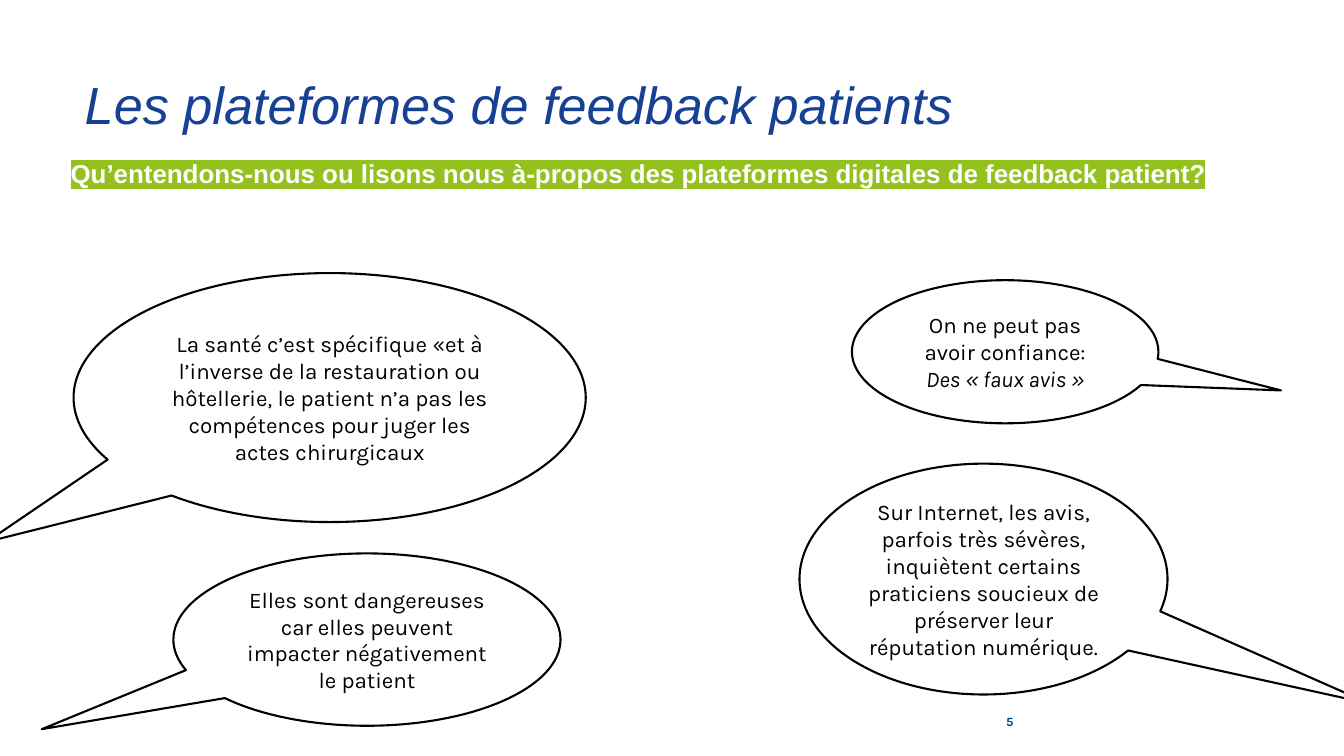
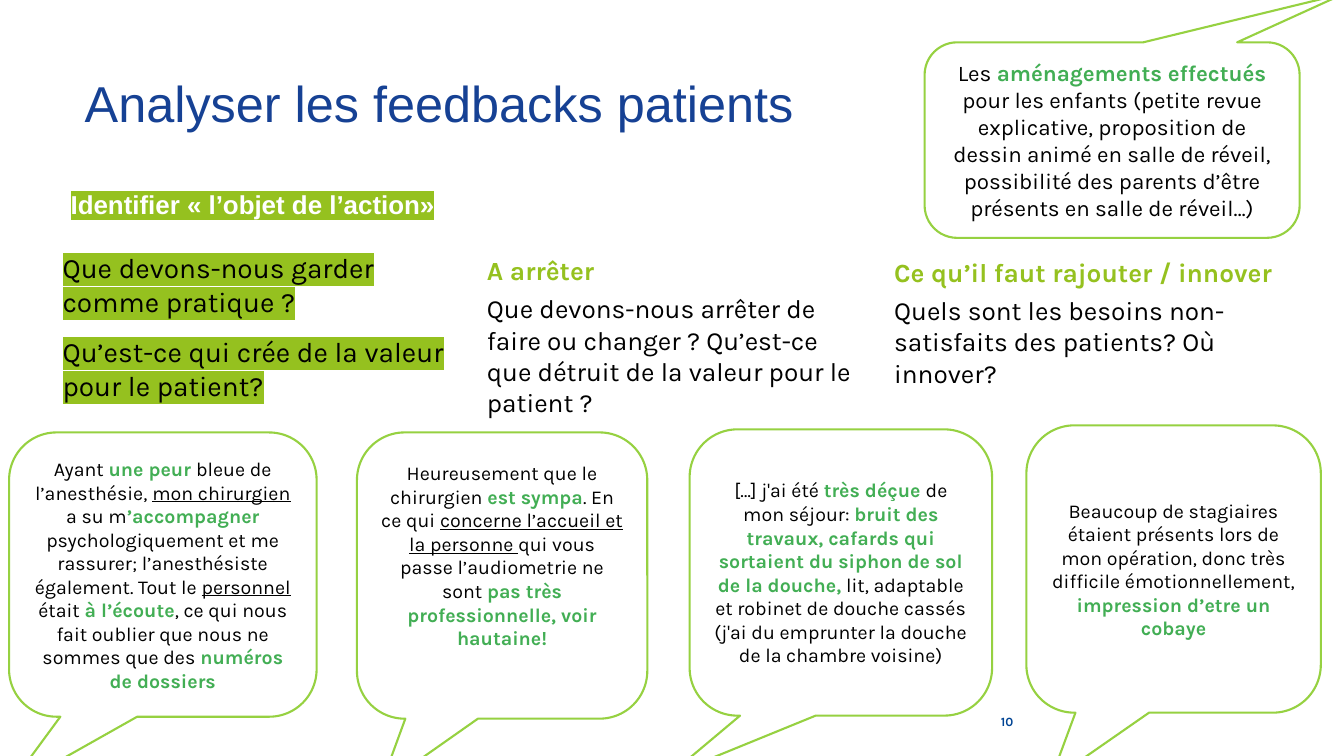
"""Build two slides on patient feedback platforms."""
from dataclasses import dataclass
from typing import NamedTuple

from lxml.etree import SubElement
from pptx import Presentation
from pptx.dml.color import RGBColor
from pptx.enum.shapes import MSO_SHAPE as Preset
from pptx.enum.text import MSO_ANCHOR as Anchor, MSO_AUTO_SIZE as AutoSize, PP_ALIGN as Align
from pptx.oxml.ns import qn
from pptx.util import Inches, Pt


@dataclass(frozen=True)
class Theme:
    navy: str = "164194"
    number_blue: str = "004494"
    lime: str = "95C11F"
    bubble_lime: str = "96D141"
    green: str = "42AE54"
    black: str = "000000"
    white: str = "FFFFFF"
    heading_font: str = "Arial"
    text_font: str = "Karla"
    subtitle_size: float = 18.5
    column_size: float = 18.7
    question_size: float = 20
    large_size: float = 16
    small_size: float = 14
    number_size: float = 9
    outline: float = 1.5


THEME = Theme()


class Box(NamedTuple):
    left: float
    top: float
    width: float
    height: float


class Span(NamedTuple):
    text: str
    color: str = THEME.black
    bold: bool = False
    italic: bool = False
    underline: bool = False
    highlight: str = ""


@dataclass(frozen=True)
class TextStyle:
    size: float
    font: str = THEME.text_font
    align: Align = Align.LEFT
    anchor: Anchor = Anchor.TOP
    before: float = 0
    after: float = 0
    margin: float = 0
    indent: float = 0
    insets: tuple[float, float, float, float] = (0.1, 0.05, 0.1, 0.05)


@dataclass(frozen=True)
class Callout:
    box: Box
    tail: tuple[float, float]
    paragraphs: list[list[Span]]
    size: float = THEME.large_size
    bottom_inset: float = 0.05


@dataclass(frozen=True)
class CalloutLook:
    preset: Preset
    outline: str


ELLIPSE = CalloutLook(Preset.OVAL_CALLOUT, THEME.black)
ROUNDED = CalloutLook(Preset.ROUNDED_RECTANGULAR_CALLOUT, THEME.bubble_lime)

TITLE_BOX = Box(0.74, 0.67, 9.4, 1.44)
NUMBER_BOX = Box(9.4, 6.96, 0.75, 0.4)
NO_INSETS = (0, 0, 0, 0)
SUBTITLE_STYLE = TextStyle(THEME.subtitle_size, THEME.heading_font, margin=0.01, indent=0.12)
NUMBER_STYLE = TextStyle(THEME.number_size, align=Align.RIGHT, anchor=Anchor.MIDDLE)
QUESTION_STYLE = TextStyle(THEME.question_size, before=4, after=8, margin=0.13, insets=NO_INSETS)


def strong(text: str) -> Span:
    return Span(text, THEME.green, bold=True)


def underlined(text: str) -> Span:
    return Span(text, underline=True)


def marked(text: str) -> Span:
    return Span(text, highlight=THEME.lime)


def place(shape, box: Box) -> None:
    shape.left, shape.top, shape.width, shape.height = map(Inches, box)


def write_span(paragraph, span: Span, style: TextStyle) -> None:
    run = paragraph.add_run()
    run.text = span.text
    font = run.font
    font.size, font.name = Pt(style.size), style.font
    font.bold, font.italic, font.underline = span.bold, span.italic, span.underline
    font.color.rgb = RGBColor.from_string(span.color)
    if span.highlight:
        properties = run._r.get_or_add_rPr()
        highlight = SubElement(properties, qn("a:highlight"))
        SubElement(highlight, qn("a:srgbClr"), val=span.highlight)
        properties.find(qn("a:latin")).addprevious(highlight)


def write_text(shape, paragraphs: list[list[Span]], style: TextStyle) -> None:
    frame = shape.text_frame
    frame.word_wrap = True
    frame.auto_size = AutoSize.NONE
    frame.vertical_anchor = style.anchor
    (frame.margin_left, frame.margin_top,
     frame.margin_right, frame.margin_bottom) = map(Inches, style.insets)
    for index, spans in enumerate(paragraphs):
        paragraph = frame.add_paragraph() if index else frame.paragraphs[0]
        properties = paragraph._p.get_or_add_pPr()
        properties.set("marL", str(Inches(style.margin)))
        properties.set("indent", str(Inches(style.indent)))
        SubElement(properties, qn("a:buNone"))
        paragraph.alignment = style.align
        paragraph.space_before = Pt(style.before if index else 0)
        paragraph.space_after = Pt(style.after)
        for span in spans:
            write_span(paragraph, span, style)


def add_text(slide, box: Box, paragraphs: list[list[Span]], style: TextStyle) -> None:
    write_text(slide.shapes.add_textbox(*map(Inches, box)), paragraphs, style)


def add_callout(slide, callout: Callout, look: CalloutLook) -> None:
    shape = slide.shapes.add_shape(look.preset, *map(Inches, callout.box))
    shape.shadow.inherit = False
    shape.adjustments[0], shape.adjustments[1] = callout.tail
    shape.fill.solid()
    shape.fill.fore_color.rgb = RGBColor.from_string(THEME.white)
    shape.line.color.rgb = RGBColor.from_string(look.outline)
    shape.line.width = Pt(THEME.outline)
    style = TextStyle(callout.size, align=Align.CENTER, anchor=Anchor.MIDDLE,
                      insets=(0.1, 0.05, 0.1, callout.bottom_inset))
    write_text(shape, callout.paragraphs, style)


def add_column(slide, box: Box, heading: str, question: str, style: TextStyle) -> None:
    add_text(slide, box, [[Span(heading, THEME.lime, bold=True)], [Span(question)]], style)


def add_slide(presentation, title: Span, title_size: float, subtitle: str,
              subtitle_box: Box, number: int, callouts: list[Callout], look: CalloutLook):
    slide = presentation.slides.add_slide(presentation.slide_layouts[1])
    heading, body = slide.shapes.title, slide.placeholders[1]
    place(heading, TITLE_BOX)
    write_text(heading, [[title]], TextStyle(title_size, THEME.heading_font))
    place(body, subtitle_box)
    subtitle_span = Span(subtitle, THEME.white, bold=True, highlight=THEME.lime)
    write_text(body, [[subtitle_span]], SUBTITLE_STYLE)
    for callout in callouts:
        add_callout(slide, callout, look)
    number_span = Span(str(number), THEME.number_blue, bold=True)
    add_text(slide, NUMBER_BOX, [[number_span]], NUMBER_STYLE)
    return slide


OPINIONS = [
    Callout(Box(0.73, 2.71, 5.08, 2.47), (-0.67, 0.58), [[Span(
        "La santé c’est spécifique «et à l’inverse de la restauration ou hôtellerie, "
        "le patient n’a pas les compétences pour juger les actes chirurgicaux")]]),
    Callout(Box(8.45, 2.78, 3.04, 1.42), (0.9, 0.27), [
        [Span("On ne peut pas avoir confiance:")],
        [Span("Des « faux avis »", italic=True)]]),
    Callout(Box(7.93, 4.6, 3.65, 2.29), (1.05, 0.54), [[Span(
        "Sur Internet, les avis, parfois très sévères, inquiètent certains praticiens "
        "soucieux de préserver leur réputation numérique.")]]),
    Callout(Box(1.72, 5.49, 3.84, 1.71), (-0.84, 0.52), [[Span(
        "Elles sont dangereuses car elles peuvent impacter négativement le patient")]]),
]

FEEDBACKS = [
    Callout(Box(0.09, 4.29, 3.05, 2.82), (-0.51, 0.76), [[
        Span("Ayant "), strong("une peur "), Span("bleue de l’anesthésie, "),
        underlined("mon chirurgien "), Span("a su m"), strong("’accompagner"),
        Span(" psychologiquement et me rassurer; l’anesthésiste également. Tout le "),
        underlined("personnel"), Span(" était "), strong("à l’écoute"),
        Span(", ce qui nous fait oublier que nous ne sommes que des "),
        strong("numéros de dossiers")]], THEME.small_size),
    Callout(Box(3.54, 4.29, 2.88, 2.84), (-0.42, 0.74), [[
        Span("Heureusement que le chirurgien "), strong("est sympa"), Span(". En ce qui "),
        underlined("concerne l’accueil et la personne "),
        Span("qui vous passe l’audiometrie ne sont "),
        strong("pas très professionnelle, voir hautaine!")]], THEME.small_size, 0.45),
    Callout(Box(6.84, 4.26, 3, 2.84), (-0.57, 0.71), [[
        Span("[…] j'ai été "), strong("très déçue "), Span("de mon séjour: "),
        strong("bruit des travaux, cafards qui sortaient du siphon de sol de la douche,"),
        Span(" lit, adaptable et robinet de douche cassés "
             "(j'ai du emprunter la douche de la chambre voisine)")]], THEME.small_size),
    Callout(Box(10.18, 4.22, 2.92, 2.85), (-0.42, 0.74), [[
        Span("Beaucoup de stagiaires étaient présents lors de mon opération, "
             "donc très difficile émotionnellement, "),
        strong("impression d’etre un cobaye")]], THEME.small_size),
    Callout(Box(9.17, 0.42, 3.72, 1.94), (0.62, -0.75), [[
        Span("Les "), strong("aménagements effectués "),
        Span("pour les enfants (petite revue explicative, proposition de dessin animé en "
             "salle de réveil, possibilité des parents d’être présents en salle de réveil…)")]]),
]


def main() -> None:
    presentation = Presentation()
    presentation.slide_width, presentation.slide_height = Inches(13.33), Inches(7.5)
    add_slide(presentation,
              Span("Les plateformes de feedback patients", THEME.navy, italic=True), 37.3,
              "Qu’entendons-nous ou lisons nous à-propos des plateformes digitales "
              "de feedback patient?",
              Box(0.47, 1.51, 12.28, 0.67), 5, OPINIONS, ELLIPSE)
    analysis = add_slide(presentation, Span("Analyser les feedbacks patients", THEME.navy), 36,
                         "Identifier « l’objet de l’action»",
                         Box(0.47, 1.82, 12.28, 0.35), 10, FEEDBACKS, ROUNDED)
    add_text(analysis, Box(0.49, 2.49, 4.19, 4.2), [
        [marked("Que devons-nous garder comme pratique ?")],
        [marked("Qu’est-ce qui crée de la valeur pour le patient?")]], QUESTION_STYLE)
    add_column(analysis, Box(4.83, 2.52, 3.67, 4.17), "A arrêter",
               "Que devons-nous arrêter de faire ou changer ? "
               "Qu’est-ce que détruit de la valeur pour le patient ?",
               TextStyle(THEME.column_size, after=5, insets=NO_INSETS))
    add_column(analysis, Box(8.77, 2.49, 4.06, 4.17), "Ce qu’il faut rajouter / innover",
               "Quels sont les besoins non-satisfaits des patients? Où innover?",
               TextStyle(THEME.column_size, after=5))
    presentation.save("out.pptx")


if __name__ == "__main__":
    main()
